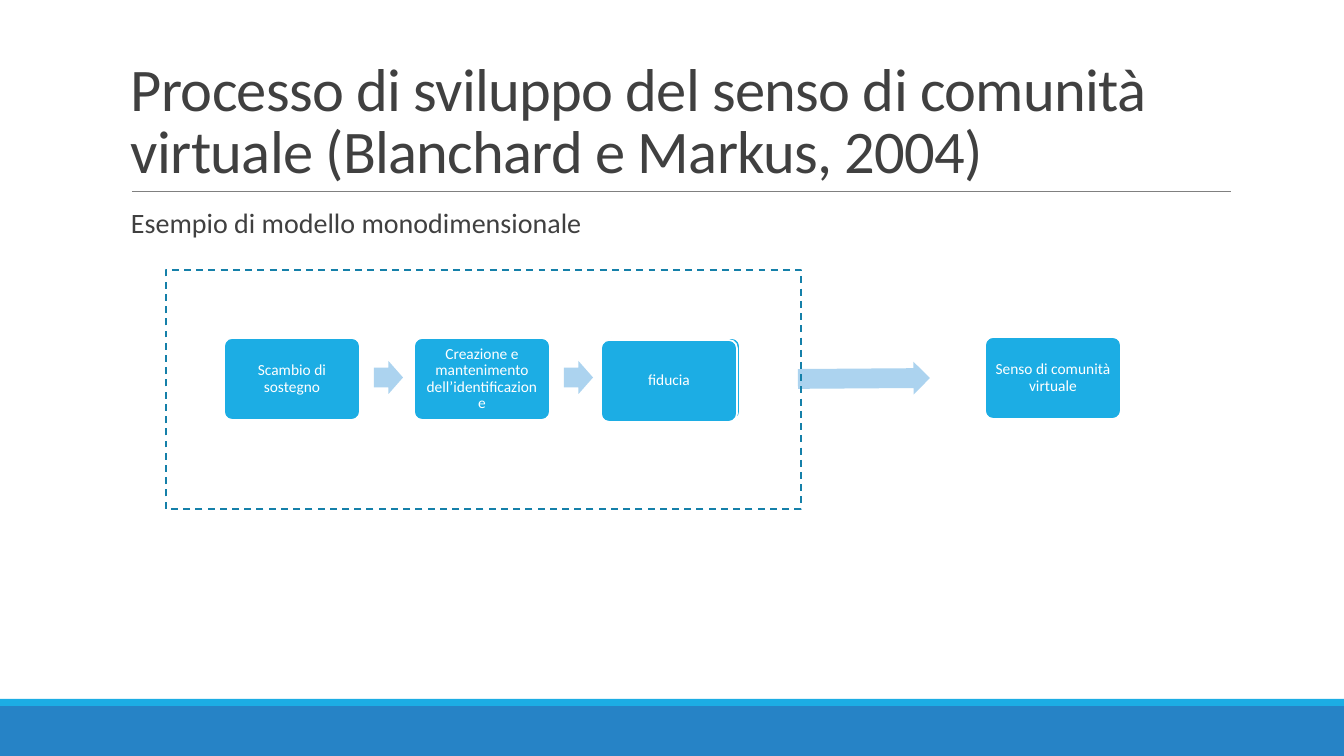
from pptx import Presentation
from pptx.dml.color import RGBColor
from pptx.enum.dml import MSO_LINE
from pptx.enum.shapes import MSO_CONNECTOR, MSO_SHAPE
from pptx.enum.text import MSO_ANCHOR, PP_ALIGN
from pptx.oxml.ns import qn
from pptx.util import Emu, Pt
from lxml.etree import SubElement

WHITE = RGBColor(0xFF, 0xFF, 0xFF)
CYAN = RGBColor(0x1C, 0xAD, 0xE4)
BLUE = RGBColor(0x26, 0x83, 0xC6)
PALE_BLUE = RGBColor(0xAC, 0xD3, 0xEF)
FRAME_BLUE = RGBColor(0x15, 0x80, 0xA9)
GRAY = RGBColor(0x80, 0x80, 0x80)
DARK = RGBColor(0x40, 0x40, 0x40)

FONT = "Calibri"
STEP_WIDTH, STEP_HEIGHT, STEP_PITCH = 136, 82, 190
ARROW_WIDTH, ARROW_HEIGHT = 29, 33


def px(length):
    return Emu(round(length * 914400 / 100.8))


def add_box(slide, kind, left, top, width, height, fill=None, line=None, adjustments=()):
    shape = slide.shapes.add_shape(kind, px(left), px(top), px(width), px(height))
    shape.shadow.inherit = False
    if fill is None:
        shape.fill.background()
    else:
        shape.fill.solid()
        shape.fill.fore_color.rgb = fill
    if line is None:
        shape.line.fill.background()
    else:
        shape.line.color.rgb = line
        shape.line.width = Pt(1.25)
    for index, value in enumerate(adjustments):
        shape.adjustments[index] = value
    return shape


def write_text(shape, text, size, color, spacing, anchor, horizontal_inset, vertical_inset):
    frame = shape.text_frame
    frame.word_wrap = True
    frame.vertical_anchor = anchor
    frame.margin_left = frame.margin_right = px(horizontal_inset)
    frame.margin_top = frame.margin_bottom = px(vertical_inset)
    paragraph = frame.paragraphs[0]
    paragraph.text = text
    paragraph.line_spacing = spacing
    paragraph.font.name = FONT
    paragraph.font.size = Pt(size)
    paragraph.font.color.rgb = color
    return paragraph


def add_step(slide, left, top, text=""):
    shape = add_box(slide, MSO_SHAPE.ROUNDED_RECTANGLE, left, top, STEP_WIDTH, STEP_HEIGHT,
                    CYAN, WHITE, (0.1,))
    if text:
        paragraph = write_text(shape, text, 11, WHITE, 0.9, MSO_ANCHOR.MIDDLE, 7, 7)
        paragraph.alignment = PP_ALIGN.CENTER


def add_arrow(slide, left, top, width):
    return add_box(slide, MSO_SHAPE.RIGHT_ARROW, left, top, width, ARROW_HEIGHT,
                   PALE_BLUE, adjustments=(0.6, 0.5))


def add_footer_bands(slide, left, top, width, height):
    add_box(slide, MSO_SHAPE.RECTANGLE, left, top + 7, width, height - 7, BLUE)
    add_box(slide, MSO_SHAPE.RECTANGLE, left, top, width, 7, CYAN)


def add_heading(slide, left, top, width, height):
    rule_y = px(top + height)
    rule = slide.shapes.add_connector(MSO_CONNECTOR.STRAIGHT, px(left + 11), rule_y,
                                      px(left + width + 1), rule_y)
    rule.line.color.rgb = GRAY
    rule.line.width = Pt(0.5)
    SubElement(rule._element.spPr, qn("a:effectLst"))
    title = slide.shapes.add_textbox(px(left), px(top), px(width), px(height))
    paragraph = write_text(title, "Processo di sviluppo del senso di comunità virtuale "
                           "(Blanchard e Markus, 2004)", 43.2, DARK, 0.85,
                           MSO_ANCHOR.BOTTOM, 10, 5)
    paragraph.runs[0].font._element.set("spc", "-50")


def add_subtitle(slide, left, top, width, height):
    subtitle = slide.shapes.add_textbox(px(left), px(top), px(width), px(height))
    paragraph = write_text(subtitle, "Esempio di modello monodimensionale", 20, DARK, 0.9,
                           MSO_ANCHOR.TOP, 10, 5)
    paragraph.space_before = Pt(12)
    paragraph.space_after = Pt(2)


def add_process(slide, left, top, width, height):
    step_left, step_top = left + 58, top + 68
    arrow_top = step_top + (STEP_HEIGHT - ARROW_HEIGHT) // 2 - 1
    steps = ("Scambio di sostegno", "Creazione e mantenimento dell’identificazione", "")
    for index, text in enumerate(steps):
        x = step_left + index * STEP_PITCH
        add_step(slide, x, step_top, text)
        if index < len(steps) - 1:
            add_arrow(slide, x + 150, arrow_top, ARROW_WIDTH)
    add_step(slide, left + 435, step_top + 2, "fiducia")
    outcome_arrow = add_arrow(slide, left + width - 3, arrow_top + 1, 132)
    outcome_arrow.rotation = 359.6
    add_step(slide, left + width + 184, step_top - 1, "Senso di comunità virtuale")
    frame = add_box(slide, MSO_SHAPE.RECTANGLE, left, top, width, height, line=FRAME_BLUE)
    frame.line.dash_style = MSO_LINE.DASH


def main():
    presentation = Presentation()
    presentation.slide_width = px(1344)
    presentation.slide_height = px(756)
    slide = presentation.slides.add_slide(presentation.slide_layouts[6])
    add_footer_bands(slide, 0, 699, 1344, 57)
    add_heading(slide, 121, 31, 1109, 160)
    add_subtitle(slide, 121, 204, 1109, 443)
    add_process(slide, 166, 270, 635, 239)
    presentation.save("out.pptx")


if __name__ == "__main__":
    main()
